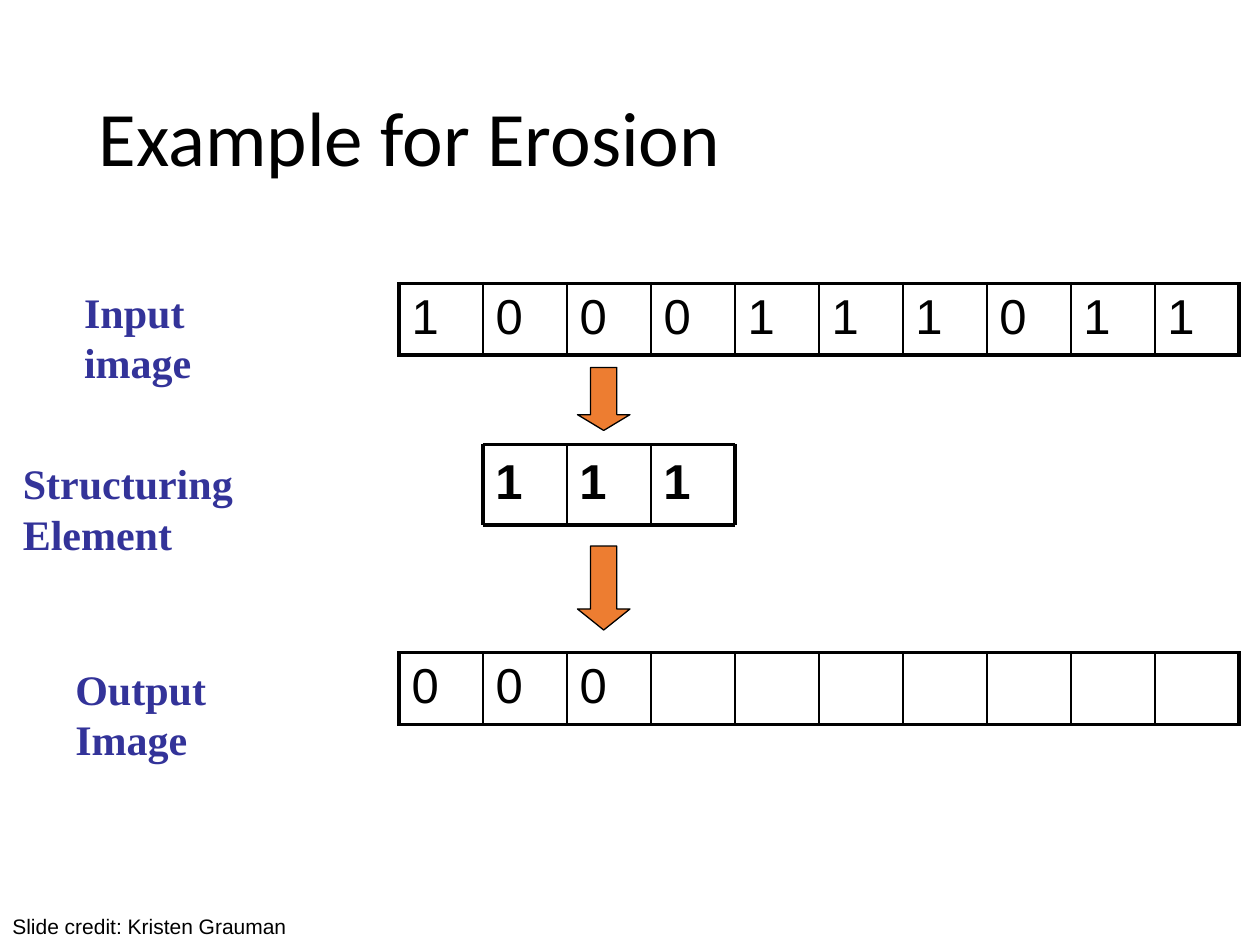
from lxml import etree
from pptx import Presentation
from pptx import util as u
from pptx.dml import color
from pptx.enum import shapes, text
from pptx.oxml import ns

Pt = u.Pt
CELL = 48
LEFT = 228
BLACK = "000000"
BLUE = "333399"
ORANGE = "ED7D31"
THICK, THIN = 2.25, 1


def rgb(code):
    return color.RGBColor.from_string(code)


def style(frame, size, face, code=BLACK, bold=False):
    for run in frame.paragraphs[0].runs:
        run.font.size = Pt(size)
        run.font.name = face
        run.font.bold = bold
        run.font.color.rgb = rgb(code)


def label(slide, words, box, size, face, code=BLACK, bold=False):
    frame = slide.shapes.add_textbox(*map(Pt, box)).text_frame
    frame.word_wrap = True
    frame.text = words
    style(frame, size, face, code, bold)
    return frame


def edge(cell, side, width, spot):
    line = etree.Element(ns.qn("a:ln" + side), w=str(Pt(width)))
    fill = etree.SubElement(line, ns.qn("a:solidFill"))
    etree.SubElement(fill, ns.qn("a:srgbClr"), val=BLACK)
    cell._tc.get_or_add_tcPr().insert(spot, line)


def strip(slide, top, bits, count=10, high=40.5):
    box = (LEFT, top, count * CELL, high)
    table = slide.shapes.add_table(1, count, *map(Pt, box)).table
    table.first_row = table.horz_banding = False
    for col in range(count):
        table.columns[col].width = Pt(CELL)
        cell = table.cell(0, col)
        cell.fill.background()
        cell.text = bits[col:col + 1]
        style(cell.text_frame, 28, "Arial")
        start = THICK if col == 0 else THIN
        end = THICK if col == count - 1 else THIN
        sides = (("L", start), ("R", end), ("T", THICK), ("B", THICK))
        for spot, (side, width) in enumerate(sides):
            edge(cell, side, width, spot)


def rule(slide, ends, width):
    line = slide.shapes.add_connector(
        shapes.MSO_CONNECTOR.STRAIGHT, *map(Pt, ends))
    line.line.color.rgb = rgb(BLACK)
    line.line.width = Pt(width)
    etree.SubElement(line._element.spPr, ns.qn("a:effectLst"))


def kernel(slide, left, top, bits, high=46):
    count = len(bits)
    right, base = left + count * CELL, top + high
    for col, bit in enumerate(bits):
        box = (left + col * CELL, top, CELL, high)
        label(slide, bit, box, 28, "Arial", bold=True)
    for y in (top, base):
        rule(slide, (left, y, right, y), THICK)
    for col in range(count + 1):
        x = left + col * CELL
        rule(slide, (x, top, x, base), THICK if col in (0, count) else THIN)


def arrow(slide, top, high, head):
    box = (330, top, 30, high)
    shape = slide.shapes.add_shape(
        shapes.MSO_SHAPE.DOWN_ARROW, *map(Pt, box))
    shape.adjustments[1] = head
    shape.shadow.inherit = False
    shape.fill.solid()
    shape.fill.fore_color.rgb = rgb(ORANGE)
    shape.line.color.rgb = rgb(BLACK)
    shape.line.width = Pt(0.75)


def main():
    deck = Presentation()
    deck.slide_width, deck.slide_height = Pt(720), Pt(540)
    slide = deck.slides.add_slide(deck.slide_layouts[6])

    title = label(slide, "Example for Erosion",
                  (49.5, 28.75, 621, 104.4), 44, "Calibri")
    title.vertical_anchor = text.MSO_ANCHOR.MIDDLE
    title.paragraphs[0].line_spacing = 0.9

    strip(slide, 162, "1000111011")
    kernel(slide, LEFT + CELL, 254, "111")
    strip(slide, 373, "000")
    arrow(slide, 210, 36, 0.3)
    arrow(slide, 312, 48, 0.4)

    names = (
        ("Input image", (41, 160, 129.6, 36)),
        ("Structuring Element", (6, 258, 208, 36)),
        ("Output Image", (36, 375.5, 147, 36)),
    )
    for words, box in names:
        label(slide, words, box, 24, "Times New Roman", BLUE, True)
    label(slide, "Slide credit: Kristen Grauman",
          (0, 518.4, 330, 21.6), 12, "Arial")
    deck.save("out.pptx")


if __name__ == "__main__":
    main()
